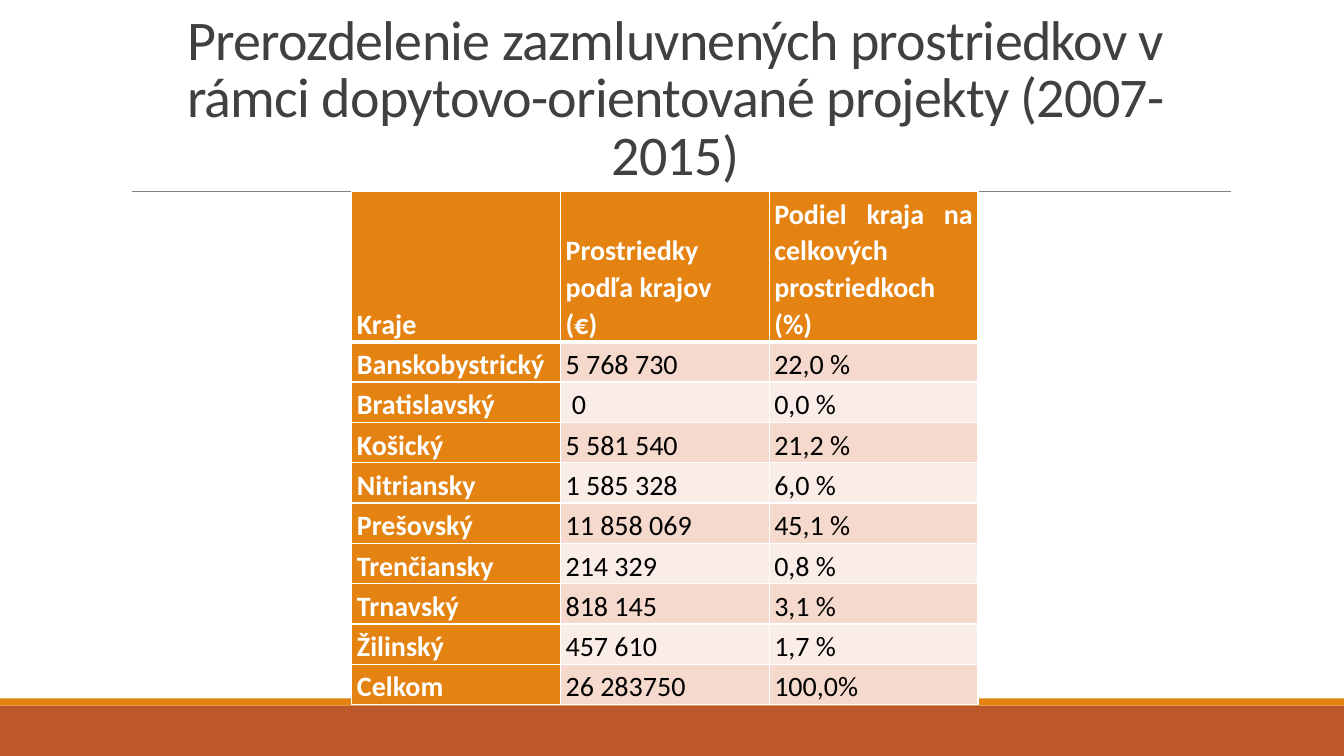
"""Build a slide with a table of contracted funds by region."""
from lxml import etree
from pptx import Presentation
from pptx.dml.color import RGBColor
from pptx.enum.shapes import MSO_CONNECTOR, MSO_SHAPE
from pptx.enum.text import MSO_ANCHOR, MSO_AUTO_SIZE, PP_ALIGN
from pptx.oxml.ns import qn
from pptx.util import Inches, Pt

TITLE = "Prerozdelenie zazmluvnených prostriedkov v rámci dopytovo-orientované projekty (2007-2015)"
ROWS = [
    ("Kraje", "Prostriedky podľa krajov\n(€)", "Podiel kraja na celkových prostriedkoch (%)"),
    ("Banskobystrický", "5 768 730", "22,0 %"),
    ("Bratislavský", " 0", "0,0 %"),
    ("Košický", "5 581 540", "21,2 %"),
    ("Nitriansky", "1 585 328", "6,0 %"),
    ("Prešovský", "11 858 069", "45,1 %"),
    ("Trenčiansky", "214 329", "0,8 %"),
    ("Trnavský", "818 145", "3,1 %"),
    ("Žilinský", "457 610", "1,7 %"),
    ("Celkom", "26 283750", "100,0%"),
]

WHITE = RGBColor(0xFF, 0xFF, 0xFF)
BLACK = RGBColor(0, 0, 0)
GREY = RGBColor(0x80, 0x80, 0x80)
DARK = RGBColor(0x40, 0x40, 0x40)
ORANGE = RGBColor(0xE4, 0x83, 0x12)
RUST = RGBColor(0xBD, 0x58, 0x2C)
BANDS = (RGBColor(0xF5, 0xD9, 0xCC), RGBColor(0xFA, 0xED, 0xE7))

W, H = 13.33, 7.5
RULE_Y = 1.9
COL_W, HEAD_H, ROW_H = 2.07, 1.49, 0.4
TABLE_X = 3.49
STRIPS = [(7, 0.5, RUST), (6.93, 0.07, ORANGE)]
CELL = {"vertical_anchor": MSO_ANCHOR.BOTTOM, "margin_left": Inches(0.05),
        "margin_right": Inches(0.05), "margin_top": 0, "margin_bottom": 0}


def apply(obj, values):
    for name, value in values.items():
        setattr(obj, name, value)


def write(tf, text, size, color, bold, align, spacing):
    tf.text = text
    for p in tf.paragraphs:
        apply(p, {"alignment": align, "line_spacing": spacing,
                  "space_before": Pt(0), "space_after": Pt(0)})
        for r in p.runs:
            apply(r.font, {"name": "Calibri", "size": Pt(size), "bold": bold})
            r.font.color.rgb = color


def add_borders(cell, widths):
    tcPr = cell._tc.get_or_add_tcPr()
    for side, width in widths.items():
        ln = etree.SubElement(tcPr, qn(f"a:ln{side}"), w=str(Pt(width)))
        fill = etree.SubElement(ln, qn("a:solidFill"))
        etree.SubElement(fill, qn("a:srgbClr"), val=str(WHITE))


def add_backdrop(slide):
    for top, height, color in STRIPS:
        sp = slide.shapes.add_shape(MSO_SHAPE.RECTANGLE, 0, Inches(top), Inches(W), Inches(height))
        sp.shadow.inherit = False
        sp.fill.solid()
        sp.fill.fore_color.rgb = color
        sp.line.fill.background()
    rule = slide.shapes.add_connector(MSO_CONNECTOR.STRAIGHT, Inches(1.31), Inches(RULE_Y),
                                      Inches(12.21), Inches(RULE_Y))
    rule.line.color.rgb = GREY
    rule.line.width = Pt(0.5)
    etree.SubElement(rule._element.spPr, qn("a:effectLst"))


def add_title(slide):
    title = slide.shapes.title
    apply(title, {"left": Inches(1.2), "top": Inches(0.31),
                  "width": Inches(11), "height": Inches(RULE_Y - 0.31)})
    tf = title.text_frame
    write(tf, TITLE, 40, DARK, False, PP_ALIGN.CENTER, 0.85)
    apply(tf, {"word_wrap": True, "auto_size": MSO_AUTO_SIZE.NONE,
               "vertical_anchor": MSO_ANCHOR.BOTTOM})
    tf.paragraphs[0].runs[0].font._element.set("spc", "-50")


def add_regions(slide):
    n_rows, n_cols = len(ROWS), len(ROWS[0])
    table = slide.shapes.add_table(n_rows, n_cols, Inches(TABLE_X), Inches(RULE_Y),
                                   Inches(n_cols * COL_W),
                                   Inches(HEAD_H + (n_rows - 1) * ROW_H)).table
    for col in table.columns:
        col.width = Inches(COL_W)
    for i, row in enumerate(ROWS):
        table.rows[i].height = Inches(ROW_H if i else HEAD_H)
        for j, text in enumerate(row):
            cell = table.cell(i, j)
            label = i == 0 or j == 0
            apply(cell, CELL)
            write(cell.text_frame, text, 20, WHITE if label else BLACK, label,
                  PP_ALIGN.JUSTIFY, 1.07)
            add_borders(cell, {"L": 1, "R": 1, "T": 3 if i == 1 else 1, "B": 1 if i else 3})
            cell.fill.solid()
            cell.fill.fore_color.rgb = ORANGE if label else BANDS[(i - 1) % 2]


def main():
    prs = Presentation()
    apply(prs, {"slide_width": Inches(W), "slide_height": Inches(H)})
    slide = prs.slides.add_slide(prs.slide_layouts[5])
    add_backdrop(slide)
    add_title(slide)
    add_regions(slide)
    prs.save("out.pptx")


if __name__ == "__main__":
    main()
